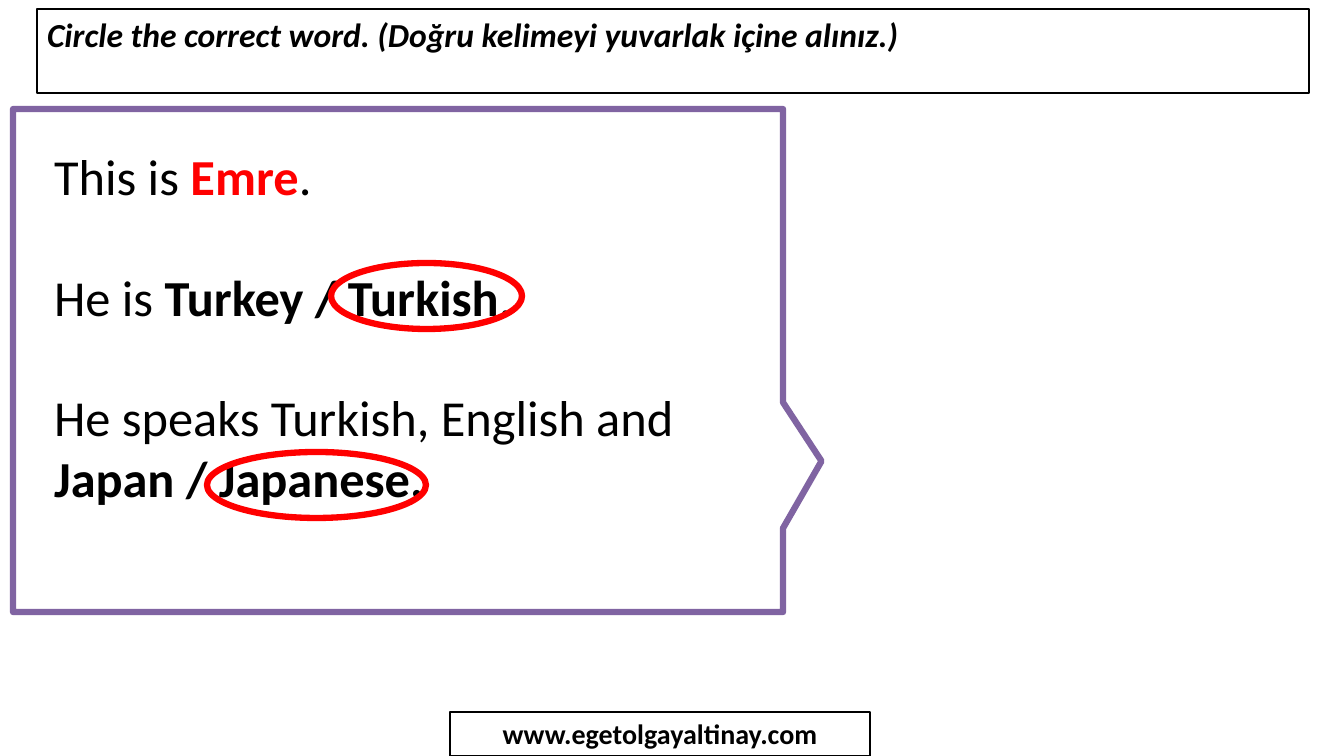
"""Build the "Circle the correct word" answer slide."""
from dataclasses import dataclass

from lxml import etree
from pptx import Presentation
from pptx import util as u
from pptx.dml.color import RGBColor
from pptx.enum import shapes, text
from pptx.oxml.ns import qn

PX_PER_INCH = 100.8
BLACK, WHITE, RED, PURPLE = "000000", "FFFFFF", "FF0000", "8064A2"
FONT = "Calibri"


@dataclass(frozen=True)
class Box:
    x: int
    y: int
    w: int
    h: int


@dataclass(frozen=True)
class Outline:
    kind: shapes.MSO_SHAPE
    box: Box
    color: str
    width: float
    fill: str | None = None


HEADER = Box(37, 9, 1272, 50)
SENTENCES = Box(44, 140, 707, 377)
CALLOUT = Outline(shapes.MSO_SHAPE.RECTANGULAR_CALLOUT, Box(13, 109, 770, 503), PURPLE, 4.5, WHITE)
SITE = Outline(shapes.MSO_SHAPE.RECTANGLE, Box(450, 712, 420, 44), BLACK, 2, WHITE)
ANSWER_RINGS = [
    Outline(shapes.MSO_SHAPE.OVAL, Box(331, 263, 191, 66), RED, 4.5),
    Outline(shapes.MSO_SHAPE.OVAL, Box(207, 452, 219, 66), RED, 4.5),
]
LINES = [
    [("This is ", {}), ("Emre", {"color": RED, "bold": True}), (".", {})],
    [("He is ", {}), ("Turkey / Turkish", {"bold": True}), (".", {})],
    [("He speaks Turkish, English and ", {}), ("Japan / Japanese.", {"bold": True})],
]


def px(n: int) -> int:
    return round(n * u.Inches(1) / PX_PER_INCH)


def rgb(color: str) -> RGBColor:
    return RGBColor.from_string(color)


def place(sp, box: Box) -> None:
    sp.left, sp.top, sp.width, sp.height = map(px, (box.x, box.y, box.w, box.h))


def paint(sp, color: str, width: float, fill: str | None) -> None:
    if fill:
        sp.fill.solid()
        sp.fill.fore_color.rgb = rgb(fill)
    else:
        sp.fill.background()
    sp.line.color.rgb = rgb(color)
    sp.line.width = u.Pt(width)


def add_outline(s, o: Outline):
    sp = s.shapes.add_shape(o.kind, *map(px, (o.box.x, o.box.y, o.box.w, o.box.h)))
    sp.shadow.inherit = False
    paint(sp, o.color, o.width, o.fill)
    return sp


def add_text(p, content: str, size: float, color: str = BLACK,
             bold: bool = False, italic: bool = False) -> None:
    r = p.add_run()
    r.text = content
    r.font.name, r.font.size = FONT, u.Pt(size)
    r.font.bold, r.font.italic = bold, italic
    r.font.color.rgb = rgb(color)


def set_frame(tf, anchor: text.MSO_ANCHOR) -> None:
    tf.word_wrap = True
    tf.auto_size = text.MSO_AUTO_SIZE.SHAPE_TO_FIT_TEXT
    tf.vertical_anchor = anchor


def add_header(s) -> None:
    sp = s.shapes.title
    place(sp, HEADER)
    paint(sp, BLACK, 2, WHITE)
    set_frame(sp.text_frame, text.MSO_ANCHOR.TOP)
    p = sp.text_frame.paragraphs[0]
    p.alignment = text.PP_ALIGN.LEFT
    add_text(p, "Circle the correct word. (Doğru kelimeyi yuvarlak içine alınız.)",
             size=24, bold=True, italic=True)


def add_sentences(s) -> None:
    sp = s.placeholders[1]
    place(sp, SENTENCES)
    tf = sp.text_frame
    set_frame(tf, text.MSO_ANCHOR.TOP)
    for i, line in enumerate(LINES):
        p = tf.add_paragraph() if i else tf.paragraphs[0]
        pPr = p._p.get_or_add_pPr()
        pPr.set("marL", "0")
        pPr.set("indent", "0")
        etree.SubElement(pPr, qn("a:buNone"))
        p.space_before = u.Pt(43 if i else 0)
        for content, style in line:
            add_text(p, content, size=36, **style)


def add_callout(s) -> None:
    sp = add_outline(s, CALLOUT)
    sp.adjustments[0], sp.adjustments[1] = 0.55, 0.2
    s.placeholders[1].element.addprevious(sp.element)


def add_site(s) -> None:
    sp = add_outline(s, SITE)
    set_frame(sp.text_frame, text.MSO_ANCHOR.TOP)
    p = sp.text_frame.paragraphs[0]
    p.alignment = text.PP_ALIGN.CENTER
    add_text(p, "www.egetolgayaltinay.com", size=20, bold=True)


def main() -> None:
    prs = Presentation()
    prs.slide_width, prs.slide_height = px(1344), px(756)
    s = prs.slides.add_slide(prs.slide_layouts[1])
    add_header(s)
    add_sentences(s)
    add_callout(s)
    add_site(s)
    for ring in ANSWER_RINGS:
        add_outline(s, ring)
    prs.save("out.pptx")


if __name__ == "__main__":
    main()
